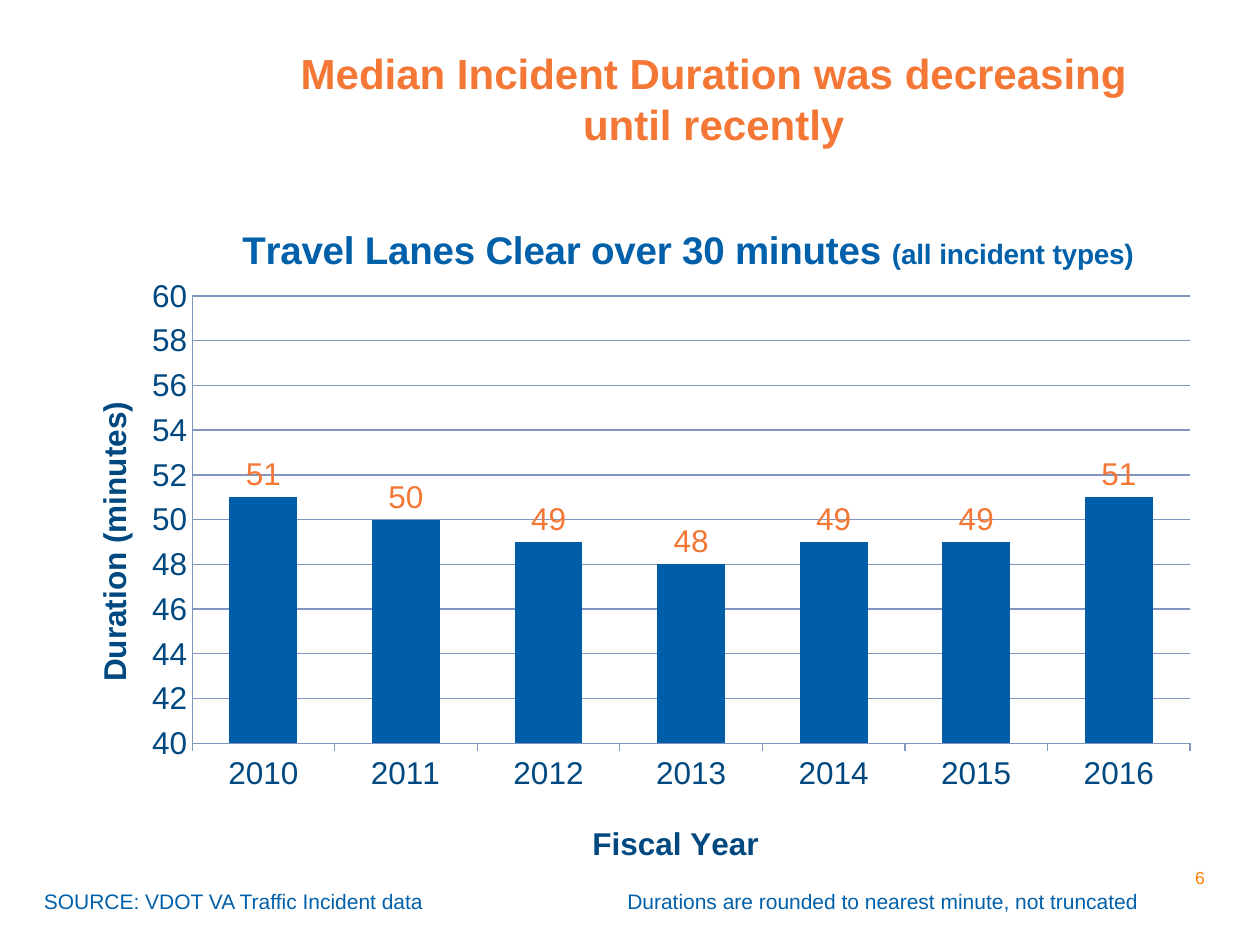
"""Build a slide with a column chart of median incident duration by fiscal year."""
import pptx
import pptx.util
import pptx.chart.data
import pptx.dml.color
import pptx.enum.chart
import pptx.enum.text
import pptx.oxml
import pptx.oxml.ns

WIDTH, HEIGHT = 10, 7.5
FONT = "Arial"
COLORS = {"orange": "F47735", "number": "FF8000", "blue": "0060AA",
          "navy": "004880", "bar": "005EA8", "grid": "8095BF"}
TITLE = "Median Incident Duration was decreasing until recently"
TITLE_BOX = (2, 0.33, 7.33, 1.25)
CHART_BOX = (0.42, 1.5, 9.21, 5.48)
CHART_TITLE = [("Travel Lanes Clear over 30 minutes ", 22), ("(all incident types)", 16)]
AXIS_TITLES = {"category": "Fiscal Year", "value": "Duration (minutes)"}
DURATIONS = {"2010": 51, "2011": 50, "2012": 49, "2013": 48,
             "2014": 49, "2015": 49, "2016": 51}
ALIGN = pptx.enum.text.PP_ALIGN
NOTES = [
    ("6", (7.58, 6.83, 2.08, 0.5), 10, "number", ALIGN.RIGHT),
    ("Durations are rounded to nearest minute, not truncated",
     (4.88, 7, 4.35, 0.3), 12, "blue", ALIGN.LEFT),
    ("SOURCE: VDOT VA Traffic Incident data", (0.25, 7, 4.35, 0.3), 12, "blue", ALIGN.LEFT),
]


def rgb(name):
    return pptx.dml.color.RGBColor.from_string(COLORS[name])


def inches(box):
    return [pptx.util.Inches(length) for length in box]


def style_font(font, size, color, bold=False):
    font.name = FONT
    font.size = pptx.util.Pt(size)
    font.bold = bold
    font.color.rgb = rgb(color)


def fill_text(shape, text, size, color, alignment, bold=False):
    frame = shape.text_frame
    frame.word_wrap = True
    frame.vertical_anchor = pptx.enum.text.MSO_ANCHOR.TOP
    frame.text = text
    paragraph = frame.paragraphs[0]
    paragraph.alignment = alignment
    style_font(paragraph.runs[0].font, size, color, bold)


def place(element, index, **shares):
    """Give a chart part a manual layout in shares of the chart's size."""
    for old in element.findall(pptx.oxml.ns.qn("c:layout")):
        element.remove(old)
    target = '<c:layoutTarget val="inner"/>' if "w" in shares else ""
    modes = '<c:xMode val="edge"/><c:yMode val="edge"/>'
    values = "".join(f'<c:{key} val="{value}"/>' for key, value in shares.items())
    element.insert(index, pptx.oxml.parse_xml(
        f'<c:layout {pptx.oxml.ns.nsdecls("c")}><c:manualLayout>'
        f'{target}{modes}{values}</c:manualLayout></c:layout>'))


def style_axis(axis, title, tick, x, y):
    style_font(axis.tick_labels.font, 18, "navy")
    axis.format.line.color.rgb = rgb("grid")
    axis.major_tick_mark = tick
    axis.minor_tick_mark = pptx.enum.chart.XL_TICK_MARK.NONE
    frame = axis.axis_title.text_frame
    frame.text = title
    style_font(frame.paragraphs[0].runs[0].font, 18, "navy", True)
    place(axis.axis_title._element, 1, x=x, y=y)


def add_duration_chart(slide):
    data = pptx.chart.data.CategoryChartData(number_format="0")
    data.categories = list(DURATIONS)
    data.add_series("Series 1", list(DURATIONS.values()))
    chart = slide.shapes.add_chart(
        pptx.enum.chart.XL_CHART_TYPE.COLUMN_CLUSTERED, *inches(CHART_BOX), data).chart
    style_font(chart.font, 18, "blue")
    chart.has_legend = False

    paragraph = chart.chart_title.text_frame.paragraphs[0]
    for text, size in CHART_TITLE:
        run = paragraph.add_run()
        run.text = text
        style_font(run.font, size, "blue", True)
    chart.chart_title.include_in_layout = True
    place(chart.chart_title._element, 1, x=0.16, y=0.05)

    ticks = pptx.enum.chart.XL_TICK_MARK
    style_axis(chart.category_axis, AXIS_TITLES["category"], ticks.OUTSIDE, 0.46, 0.91)
    axis = chart.value_axis
    style_axis(axis, AXIS_TITLES["value"], ticks.NONE, 0.03, 0.3)
    axis.axis_title.text_frame._txBody.bodyPr.set("rot", "-5400000")
    axis.minimum_scale, axis.maximum_scale, axis.major_unit = 40, 60, 2
    axis.has_major_gridlines = True
    axis.major_gridlines.format.line.color.rgb = rgb("grid")
    place(chart._chartSpace.chart.plotArea, 0, x=0.12, y=0.155, w=0.86, h=0.648)

    plot = chart.plots[0]
    plot.gap_width = 110
    plot.vary_by_categories = False
    series = plot.series[0]
    series.format.fill.solid()
    series.format.fill.fore_color.rgb = rgb("bar")
    labels = series.data_labels
    labels.show_value = True
    labels.position = pptx.enum.chart.XL_LABEL_POSITION.OUTSIDE_END
    style_font(labels.font, 18, "orange")


def main():
    presentation = pptx.Presentation()
    presentation.slide_width, presentation.slide_height = inches((WIDTH, HEIGHT))
    slide = presentation.slides.add_slide(presentation.slide_layouts[5])
    title = slide.shapes.title
    title.left, title.top, title.width, title.height = inches(TITLE_BOX)
    fill_text(title, TITLE, 24, "orange", ALIGN.CENTER, True)
    add_duration_chart(slide)
    for text, box, size, color, alignment in NOTES:
        fill_text(slide.shapes.add_textbox(*inches(box)), text, size, color, alignment)
    presentation.save("out.pptx")


if __name__ == "__main__":
    main()
